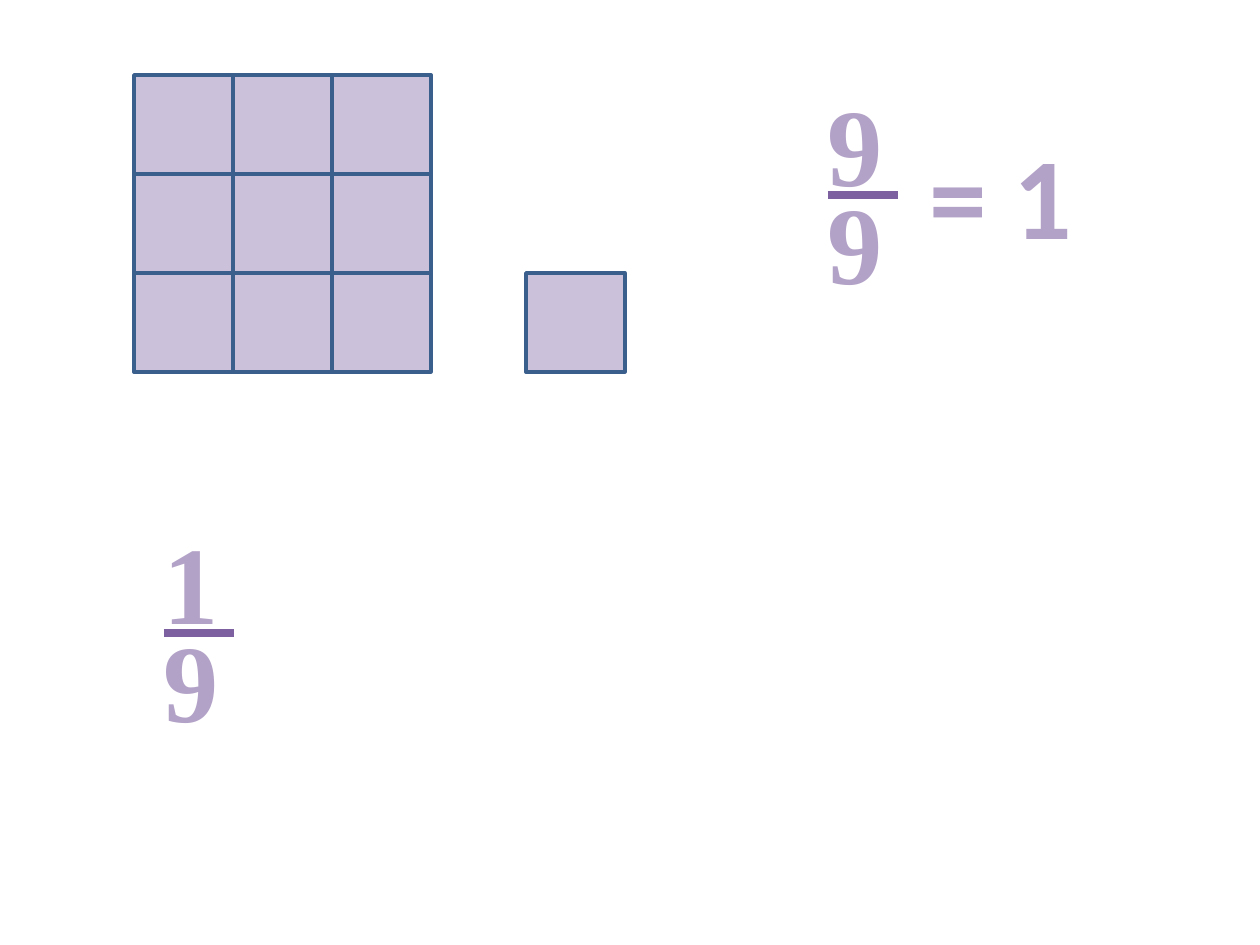
from lxml import etree
from pptx import Presentation
from pptx.dml.color import RGBColor
from pptx.enum.shapes import MSO_CONNECTOR, MSO_SHAPE
from pptx.oxml.ns import qn
from pptx.util import Pt

RECTANGLE = MSO_SHAPE.RECTANGLE
STRAIGHT = MSO_CONNECTOR.STRAIGHT
EMU_PER_INCH, PX_PER_INCH = 914400, 126
SQUARE_FILL, SQUARE_LINE = "CCC1DA", "3A5F8C"
TEXT_COLOR, BAR_COLOR = "B3A2C7", "7D60A0"
CELL = 99


def px(length):
    return round(length * EMU_PER_INCH / PX_PER_INCH)


def color(hex_string):
    return RGBColor.from_string(hex_string)


def add_square(shapes, left, top, size):
    square = shapes.add_shape(RECTANGLE, px(left), px(top), px(size), px(size))
    square.shadow.inherit = False
    square.fill.solid()
    square.fill.fore_color.rgb = color(SQUARE_FILL)
    square.line.color.rgb = color(SQUARE_LINE)
    square.line.width = Pt(2)


def add_grid(shapes, left, top, count):
    for row in range(count):
        for column in range(count):
            add_square(shapes, left + column * CELL, top + row * CELL, CELL)


def add_text(shapes, text, box, font_name, size, margins=(0, 0)):
    text_box = shapes.add_textbox(*map(px, box))
    frame = text_box.text_frame
    frame.margin_left = frame.margin_right = px(margins[0])
    frame.margin_top = frame.margin_bottom = px(margins[1])
    frame.word_wrap = True
    frame.text = text
    font = frame.paragraphs[0].runs[0].font
    font.name = font_name
    font.size = Pt(size)
    font.bold = True
    font.color.rgb = color(TEXT_COLOR)


def add_fraction(slide, left, top, numerator, denominator):
    shapes = slide.shapes.add_group_shape().shapes
    bar_top = px(top + 119)
    bar = shapes.add_connector(STRAIGHT, px(left), bar_top, px(left + 70), bar_top)
    bar.line.color.rgb = color(BAR_COLOR)
    bar.line.width = Pt(4.5)
    etree.SubElement(bar.element.spPr, qn("a:effectLst"))
    for text, offset in ((denominator, 98), (numerator, 0)):
        add_text(shapes, text, (left, top + offset, 81, 134), "Times New Roman", 63)


def main():
    presentation = Presentation()
    presentation.slide_width = px(1260)
    presentation.slide_height = px(945)
    slide = presentation.slides.add_slide(presentation.slide_layouts[6])
    add_grid(slide.shapes, 134, 75, 3)
    add_fraction(slide, 164, 514, "1", "9")
    add_fraction(slide, 828, 76, "9", "9")
    add_square(slide.shapes, 526, 273, CELL)
    add_text(slide.shapes, "= 1", (917, 118, 228, 152), "Calibri", 66, (13, 6))
    presentation.save("out.pptx")


if __name__ == "__main__":
    main()
